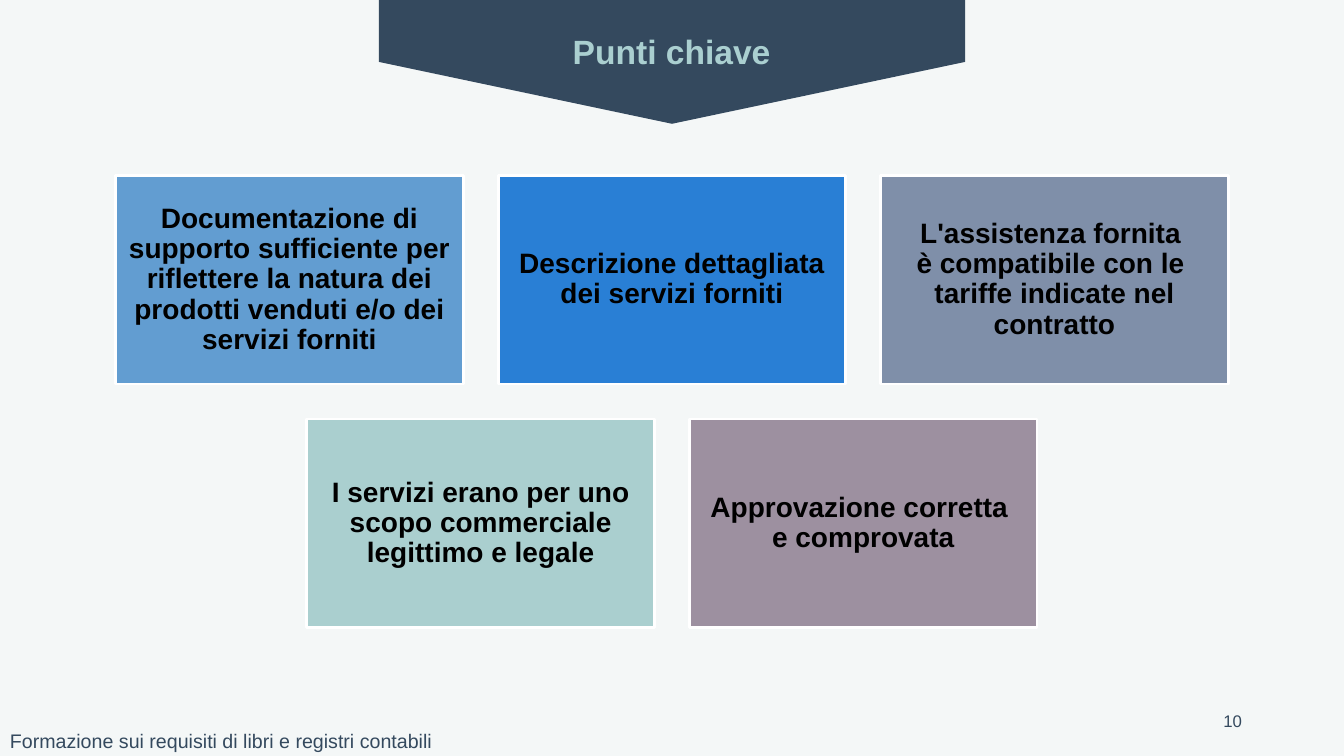
from pptx import Presentation
from pptx.dml.color import RGBColor
from pptx.enum.shapes import MSO_SHAPE
from pptx.enum.text import MSO_ANCHOR, MSO_AUTO_SIZE, PP_ALIGN
from pptx.util import Cm, Pt

PENTAGON, RECTANGLE = MSO_SHAPE.PENTAGON, MSO_SHAPE.RECTANGLE
TOP, MIDDLE = MSO_ANCHOR.TOP, MSO_ANCHOR.MIDDLE
LEFT, CENTER, RIGHT = PP_ALIGN.LEFT, PP_ALIGN.CENTER, PP_ALIGN.RIGHT
NO_AUTOFIT = MSO_AUTO_SIZE.NONE
TITLE_ONLY_LAYOUT = 5

BACKGROUND = RGBColor(0xF4, 0xF7, 0xF7)
NAVY = RGBColor(0x34, 0x49, 0x5E)
AQUA = RGBColor(0xAA, 0xCF, 0xD0)
WHITE = RGBColor(0xFF, 0xFF, 0xFF)
BLACK = RGBColor(0x00, 0x00, 0x00)
SKY = RGBColor(0x62, 0x9D, 0xD1)
BLUE = RGBColor(0x29, 0x7F, 0xD5)
SLATE = RGBColor(0x7F, 0x8F, 0xA9)
MINT = RGBColor(0xAA, 0xCF, 0xCF)
MAUVE = RGBColor(0x9D, 0x90, 0xA0)

SLIDE_WIDTH, SLIDE_HEIGHT = Cm(33.87), Cm(19.05)
CARD_WIDTH, CARD_HEIGHT, CARD_GAP = Cm(8.76), Cm(5.26), Cm(0.88)
CARDS_TOP = Cm(4.42)
CARD_MARGIN = Cm(0.2)

TITLE_FONT = {"size": Pt(24), "bold": True}
CARD_FONT = {"size": Pt(20), "bold": True}
FOOTER_FONT = {"size": Pt(14)}
NUMBER_FONT = {"size": Pt(12)}

CARD_ROWS = [
    [
        ("Documentazione di supporto sufficiente per riflettere la natura "
         "dei prodotti venduti e/o dei servizi forniti", SKY),
        ("Descrizione dettagliata dei servizi forniti", BLUE),
        ("L'assistenza fornita \nè compatibile con le \n"
         "tariffe indicate nel contratto", SLATE),
    ],
    [
        ("I servizi erano per uno scopo commerciale legittimo e legale", MINT),
        ("Approvazione corretta \ne comprovata", MAUVE),
    ],
]


def write_text(shape, text, font_format, color, alignment, anchor):
    frame = shape.text_frame
    frame.word_wrap = True
    frame.auto_size = NO_AUTOFIT
    frame.vertical_anchor = anchor
    paragraph = frame.paragraphs[0]
    paragraph.text = text
    paragraph.alignment = alignment
    for run in paragraph.runs:
        run.font.name = "Arial"
        run.font.color.rgb = color
        for attribute, value in font_format.items():
            setattr(run.font, attribute, value)


def add_filled_shape(slide, kind, left, top, width, height, fill):
    shape = slide.shapes.add_shape(kind, left, top, width, height)
    shape.shadow.inherit = False
    shape.fill.solid()
    shape.fill.fore_color.rgb = fill
    shape.line.fill.background()
    return shape


def add_label(slide, box, text, font_format, alignment, anchor):
    label = slide.shapes.add_textbox(*box)
    write_text(label, text, font_format, NAVY, alignment, anchor)


def add_title_banner(slide, text):
    """Place the title over a pentagon that points down from the top edge."""
    length, breadth = Cm(3.12), Cm(14.78)
    banner = add_filled_shape(
        slide, PENTAGON, (SLIDE_WIDTH - length) // 2, (length - breadth) // 2,
        length, breadth, NAVY)
    banner.rotation = 90
    title = slide.shapes.title
    title.left, title.top = Cm(7.55), Cm(0.64)
    title.width, title.height = Cm(18.75), Cm(1.27)
    write_text(title, text, TITLE_FONT, AQUA, CENTER, TOP)
    title.element.addprevious(banner.element)


def add_card(slide, left, top, text, fill):
    card = add_filled_shape(
        slide, RECTANGLE, left, top, CARD_WIDTH, CARD_HEIGHT, fill)
    card.line.color.rgb = WHITE
    card.line.width = Pt(2)
    write_text(card, text, CARD_FONT, BLACK, CENTER, MIDDLE)
    for side in ("left", "top", "right", "bottom"):
        setattr(card.text_frame, f"margin_{side}", CARD_MARGIN)
    card.text_frame.paragraphs[0].line_spacing = 0.9


def add_card_rows(slide, rows):
    """Lay out the cards in rows, each centred on the slide."""
    for row_index, row in enumerate(rows):
        top = CARDS_TOP + row_index * (CARD_HEIGHT + CARD_GAP)
        row_width = len(row) * (CARD_WIDTH + CARD_GAP) - CARD_GAP
        row_left = (SLIDE_WIDTH - row_width) // 2
        for column, (text, fill) in enumerate(row):
            left = row_left + column * (CARD_WIDTH + CARD_GAP)
            add_card(slide, left, top, text, fill)


def main():
    presentation = Presentation()
    presentation.slide_width = SLIDE_WIDTH
    presentation.slide_height = SLIDE_HEIGHT
    layout = presentation.slide_layouts[TITLE_ONLY_LAYOUT]
    slide = presentation.slides.add_slide(layout)
    slide.background.fill.solid()
    slide.background.fill.fore_color.rgb = BACKGROUND

    add_title_banner(slide, "Punti chiave")
    add_card_rows(slide, CARD_ROWS)
    add_label(slide, (Cm(0), Cm(18.24), Cm(13.11), Cm(0.81)),
              "Formazione sui requisiti di libri e registri contabili",
              FOOTER_FONT, LEFT, TOP)
    add_label(slide, (Cm(23.93), Cm(17.65), Cm(7.62), Cm(1.02)),
              "10", NUMBER_FONT, RIGHT, MIDDLE)
    presentation.save("out.pptx")


if __name__ == "__main__":
    main()
